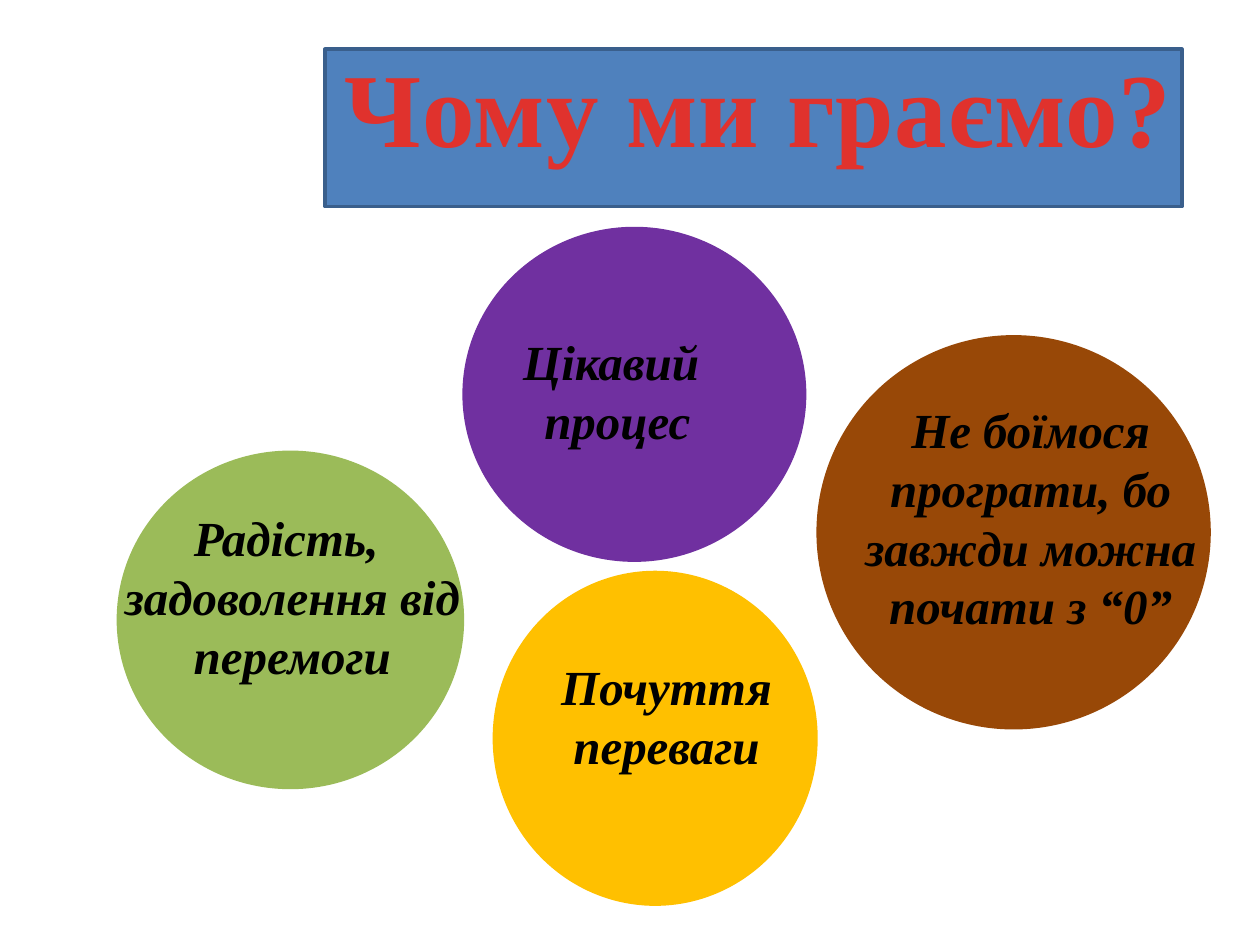
from pptx import Presentation
from pptx import util as u
from pptx.dml.color import RGBColor
from pptx.enum import shapes, text


def color(value):
    return RGBColor.from_string(value)


class SlideBuilder:
    font = "Times New Roman"

    def __init__(self, slide):
        self.s = slide

    def shape(self, kind, box, fill, line=None):
        sp = self.s.shapes.add_shape(kind, *map(u.Inches, box))
        sp.shadow.inherit = False
        sp.fill.solid()
        sp.fill.fore_color.rgb = color(fill)
        if line:
            sp.line.color.rgb = color(line)
            sp.line.width = u.Pt(2)
        else:
            sp.line.fill.background()

    def label(self, box, content, size=28, italic=True):
        sp = self.s.shapes.add_textbox(*map(u.Inches, box))
        tf = sp.text_frame
        tf.word_wrap = True
        tf.auto_size = text.MSO_AUTO_SIZE.SHAPE_TO_FIT_TEXT
        tf.text = content
        for p in tf.paragraphs:
            p.alignment = text.PP_ALIGN.CENTER
            for r in p.runs:
                r.font.name = self.font
                r.font.size = u.Pt(size)
                r.font.bold = True
                r.font.italic = italic
                r.font.color.rgb = color("000000")
        return tf

    def title(self, box, content):
        r = self.label(box, content, 60, None).paragraphs[0].runs[0]
        r.font.fill.gradient()
        r.font.fill.gradient_angle = 270
        stops = ((0.25, "E0322D"), (1, "A2201C"))
        for stop, (position, shade) in zip(r.font.fill.gradient_stops, stops):
            stop.position = position
            stop.color.rgb = color(shade)
        r.font._element.set("spc", "50")


def main():
    prs = Presentation()
    prs.slide_width, prs.slide_height = u.Inches(10), u.Inches(7.5)
    builder = SlideBuilder(prs.slides.add_slide(prs.slide_layouts[6]))

    # Reason circles
    circles = [
        ((6.48, 2.66, 3.13, 3.13), "984807"),
        ((3.91, 4.53, 2.58, 2.66), "FFC000"),
        ((3.67, 1.8, 2.73, 2.66), "7030A0"),
        ((0.94, 3.59, 2.73, 2.66), "9BBB59", "9BBB59"),
    ]
    for circle in circles:
        builder.shape(shapes.MSO_SHAPE.OVAL, *circle)

    # Title banner
    builder.shape(shapes.MSO_SHAPE.RECTANGLE, (2.58, 0.39, 6.8, 1.25), "4F81BD", "3A5F8C")
    builder.title((2.32, 0.29, 7.4, 1.11), "Чому ми граємо?")

    # Reasons, all in boxes of one width
    reasons = [
        (0.7, 3.98, 1.51, "Радість, \nзадоволення від перемоги"),
        (3.28, 2.58, 1.04, "Цікавий \nпроцес"),
        (3.67, 5.16, 1.04, "Почуття переваги"),
        (6.56, 3.12, 1.99, "Не боїмося програти, бо завжди можна почати з “0”"),
    ]
    for left, top, height, reason in reasons:
        builder.label((left, top, 3.24, height), reason)

    prs.save("out.pptx")


if __name__ == "__main__":
    main()
